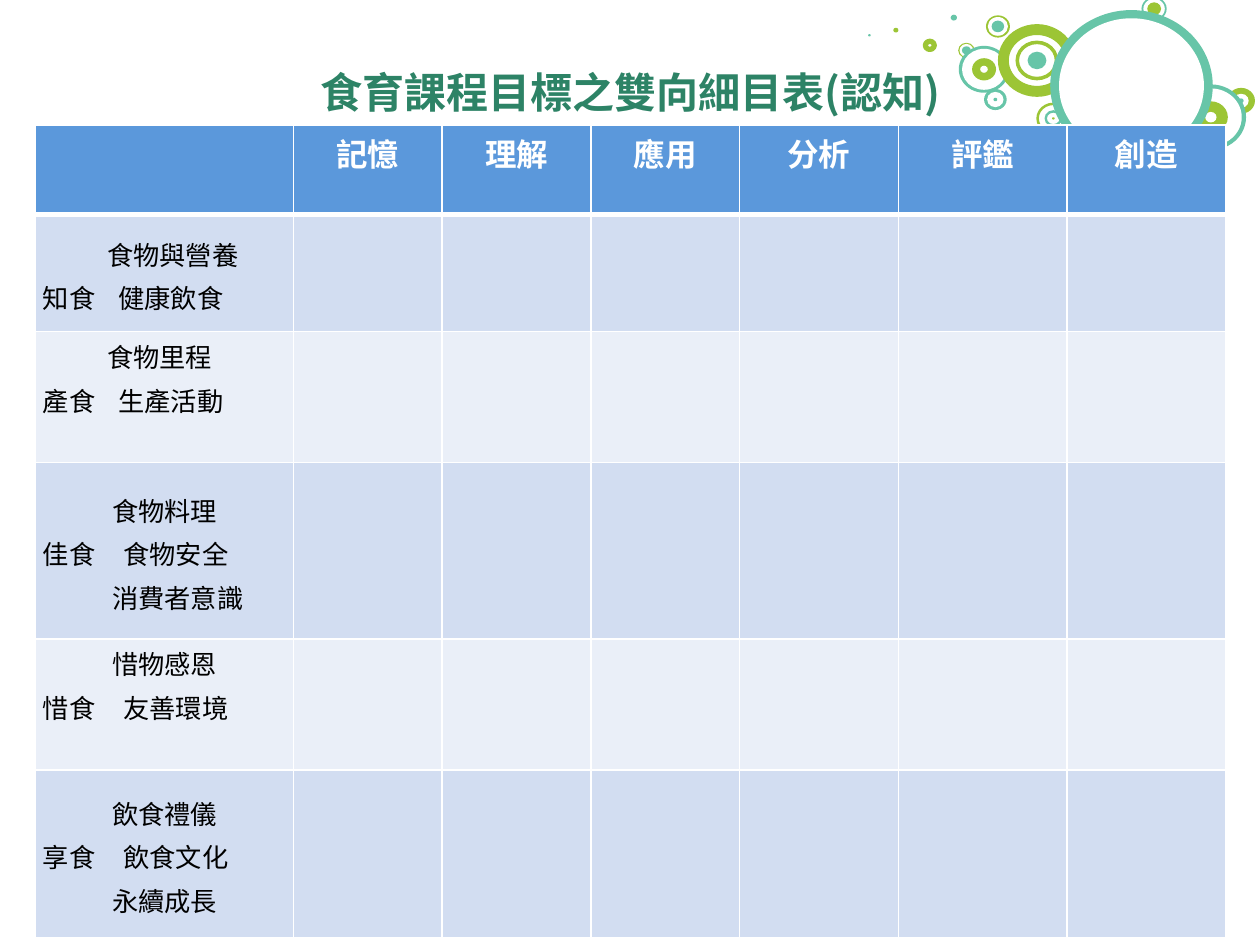
import pptx
import pptx.util
import pptx.dml.color
import pptx.enum.shapes
import pptx.enum.text
import pptx.oxml.ns
import lxml.etree

Inches = pptx.util.Inches
Pt = pptx.util.Pt
RGBColor = pptx.dml.color.RGBColor
Kind = pptx.enum.shapes.MSO_SHAPE
Anchor = pptx.enum.text.MSO_ANCHOR
Align = pptx.enum.text.PP_ALIGN

TEAL = RGBColor(0x67, 0xC5, 0xA8)
LIME = RGBColor(0x9C, 0xC5, 0x35)
WHITE = RGBColor(0xFF, 0xFF, 0xFF)
BLACK = RGBColor(0, 0, 0)
GREEN = RGBColor(0x2D, 0x83, 0x66)
BLUE = RGBColor(0x5B, 0x98, 0xDB)
PALE = RGBColor(0xD2, 0xDD, 0xF1)
LIGHT = RGBColor(0xEA, 0xEF, 0xF8)

CJK = "Noto Sans CJK SC"
SQUASH = 0.93

DOTS = [
    (9.16, 0.07, [(TEAL, 0.2), (WHITE, 0.17), (LIME, 0.11)]),
    (7.57, 0.14, [(TEAL, 0.05)]),
    (7.11, 0.24, [(LIME, 0.04)]),
    (6.9, 0.28, [(TEAL, 0.02)]),
    (7.67, 0.4, [(LIME, 0.13), (WHITE, 0.11), (TEAL, 0.07)]),
    (7.9, 0.79, [(TEAL, 0.18), (WHITE, 0.13), (TEAL, 0.03)]),
    (7.81, 0.55, [(TEAL, 0.4), (WHITE, 0.35), (LIME, 0.19), (WHITE, 0.06)]),
    (9.85, 0.8, [(LIME, 0.22), (WHITE, 0.12), (TEAL, 0.04)]),
    (9.61, 0.93, [(TEAL, 0.56), (WHITE, 0.49), (LIME, 0.27), (WHITE, 0.09)]),
    (8.36, 0.94, [(LIME, 0.27, 0.08), (TEAL, 0.14, 0.15), (LIME, 0.02)]),
    (8.23, 0.48, [(WHITE, 0.49), (LIME, 0.62, 0.15), (LIME, 0.34, 0.09),
                  (TEAL, 0.15)]),
    (9.34, 1.22, [(TEAL, 0.2), (WHITE, 0.17), (LIME, 0.11)]),
    (7.92, 0.21, [(LIME, 0.19), (WHITE, 0.16), (TEAL, 0.1)]),
    (8.98, 0.68, [(TEAL, 1.29), (WHITE, 1.15)]),
]

HEADS = ["", "記憶", "理解", "應用", "分析", "評鑑", "創造"]
WIDTHS = [2.05, 1.18, 1.18, 1.18, 1.26, 1.34, 1.26]
HEAD_HEIGHT = 0.71
TOPICS = [
    (0.93, Anchor.MIDDLE, 0.51, ["食物與營養", "知食\t健康飲食"]),
    (1.04, Anchor.TOP, 0.51, ["食物里程", "產食\t生產活動"]),
    (1.4, Anchor.MIDDLE, 0.55, ["食物料理", "佳食\t食物安全", "消費者意識"]),
    (1.04, Anchor.TOP, 0.55, ["惜物感恩", "惜食\t友善環境"]),
    (1.33, Anchor.MIDDLE, 0.55, ["飲食禮儀", "享食\t飲食文化", "永續成長"]),
]


def node(parent, tag, **attrs):
    return lxml.etree.SubElement(parent, pptx.oxml.ns.qn(tag), **attrs)


def style(para, size, color, bold=False, face="Arial"):
    for run in para.runs:
        run.font.size = Pt(size)
        run.font.bold = bold
        run.font.color.rgb = color
        run.font.name = face
        node(run.font._element, "a:ea", typeface=CJK)


def round_at(slide, x, y, width, hole=0):
    height = width * SQUASH
    kind = Kind.DONUT if hole else Kind.OVAL
    shape = slide.shapes.add_shape(
        kind, Inches(x - width / 2), Inches(y - height / 2),
        Inches(width), Inches(height))
    shape.shadow.inherit = False
    if hole:
        shape.adjustments[0] = hole
    return shape


def target(slide, x, y, layers):
    for color, *sizes in layers:
        shape = round_at(slide, x, y, *sizes)
        shape.fill.solid()
        shape.fill.fore_color.rgb = color
        shape.line.fill.background()


def hoop(slide, x, y, width):
    shape = round_at(slide, x, y, width)
    shape.fill.background()
    shape.line.color.rgb = LIME
    shape.line.width = Pt(3)


def paint(cell, color, top, bottom):
    props = cell._tc.get_or_add_tcPr()
    for side, width in zip("LRTB", (1, 1, top, bottom)):
        line = node(props, f"a:ln{side}", w=str(Pt(width)))
        node(node(line, "a:solidFill"), "a:srgbClr", val=str(WHITE))
    cell.fill.solid()
    cell.fill.fore_color.rgb = color


def inset(cell, side, edge):
    cell.margin_left = cell.margin_right = Inches(side)
    cell.margin_top = cell.margin_bottom = Inches(edge)


def head(cell, text):
    inset(cell, 0.07, 0.04)
    cell.text_frame.text = text
    para = cell.text_frame.paragraphs[0]
    para.alignment = Align.CENTER
    style(para, 18, WHITE, True)


def topic(cell, anchor, indent, lines):
    inset(cell, 0.06, 0)
    cell.vertical_anchor = anchor
    cell.text_frame.text = "\n".join(lines)
    for para in cell.text_frame.paragraphs:
        para.line_spacing = 1.15
        props = para._p.get_or_add_pPr()
        if "\t" in para.text:
            stop = str(Inches(indent + 0.09))
            node(node(props, "a:tabLst"), "a:tab", pos=stop, algn="l")
        else:
            props.set("marL", str(Inches(indent)))
        style(para, 15, BLACK)


def grid(slide):
    heights = [HEAD_HEIGHT] + [item[0] for item in TOPICS]
    table = slide.shapes.add_table(
        len(heights), len(WIDTHS), Inches(0.28), Inches(0.99),
        Inches(sum(WIDTHS)), Inches(sum(heights))).table
    for col, width in zip(table.columns, WIDTHS):
        col.width = Inches(width)
    for index, height in enumerate(heights):
        table.rows[index].height = Inches(height)
        color = BLUE if index == 0 else PALE if index % 2 else LIGHT
        for cell in table.rows[index].cells:
            paint(cell, color, 3 if index == 1 else 1, 3 if index == 0 else 1)
    for cell, text in zip(table.rows[0].cells, HEADS):
        head(cell, text)
    for index, (_, anchor, indent, lines) in enumerate(TOPICS, 1):
        topic(table.cell(index, 0), anchor, indent, lines)


def heading(slide, text):
    title = slide.shapes.title
    title.left, title.top = Inches(0.69), Inches(0.6)
    title.width, title.height = Inches(8.62), Inches(0.26)
    frame = title.text_frame
    frame.text = text
    frame.vertical_anchor = Anchor.MIDDLE
    frame.paragraphs[0].alignment = Align.CENTER
    style(frame.paragraphs[0], 24, GREEN, True, CJK)
    slide.shapes._spTree.append(title._element)


def main():
    deck = pptx.Presentation()
    deck.slide_width, deck.slide_height = Inches(10), Inches(7.5)
    slide = deck.slides.add_slide(deck.slide_layouts[5])
    hoop(slide, 7.38, 0.36, 0.07)
    for dot in DOTS:
        target(slide, *dot)
    grid(slide)
    heading(slide, "食育課程目標之雙向細目表(認知)")
    deck.save("out.pptx")


if __name__ == "__main__":
    main()
